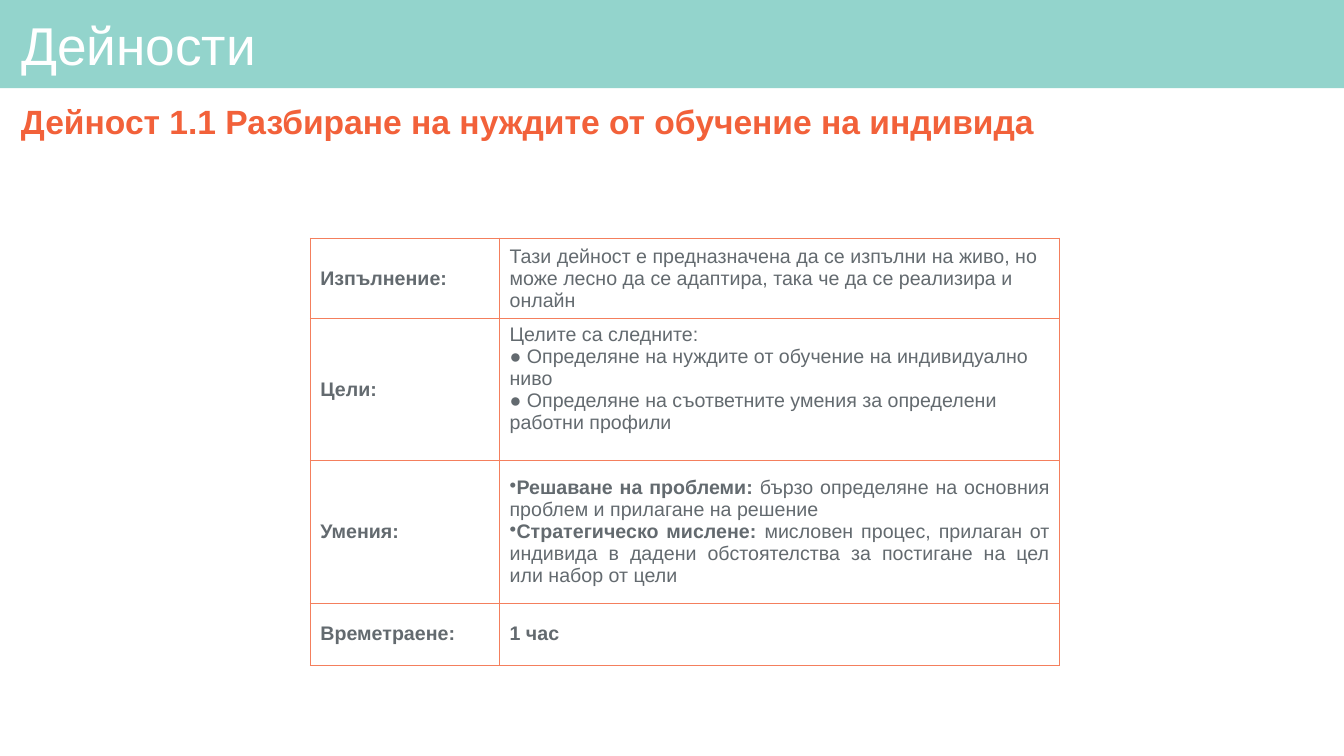
from lxml import etree
from pptx import Presentation
from pptx.dml.color import RGBColor
from pptx.enum.shapes import MSO_SHAPE
from pptx.enum.text import MSO_ANCHOR, MSO_AUTO_SIZE, PP_ALIGN
from pptx.oxml.ns import qn
from pptx.util import Cm, Pt

TEAL = RGBColor(0x93, 0xD4, 0xCC)
WHITE = RGBColor(0xFF, 0xFF, 0xFF)
ORANGE = RGBColor(0xF2, 0x61, 0x3A)
BORDER = RGBColor(0xF4, 0x7F, 0x5D)
GREY = RGBColor(0x63, 0x6A, 0x6F)
RECTANGLE = MSO_SHAPE.RECTANGLE
TOP, MIDDLE = MSO_ANCHOR.TOP, MSO_ANCHOR.MIDDLE
LEFT, JUSTIFY = PP_ALIGN.LEFT, PP_ALIGN.JUSTIFY
NO_AUTOFIT = MSO_AUTO_SIZE.NONE


def style(paragraph, size, color, bold=False):
    font = paragraph.font
    font.name, font.size, font.bold = "Arial", Pt(size), bold
    font.color.rgb = color


def add_border(cell):
    properties = cell._tc.get_or_add_tcPr()
    for side in ("a:lnL", "a:lnR", "a:lnT", "a:lnB"):
        line = etree.SubElement(properties, qn(side), w=str(Pt(0.75)))
        fill = etree.SubElement(line, qn("a:solidFill"))
        etree.SubElement(fill, qn("a:srgbClr"), val=str(BORDER))


prs = Presentation()
prs.slide_width, prs.slide_height = Cm(33.87), Cm(19.05)
slide = prs.slides.add_slide(prs.slide_layouts[5])

# Header band, behind the title
band = slide.shapes.add_shape(RECTANGLE, 0, 0, prs.slide_width, Cm(2.22))
band.shadow.inherit = False
band.fill.solid()
band.fill.fore_color.rgb = TEAL
band.line.fill.background()
slide.shapes._spTree.insert(2, band._element)

# Title
title = slide.shapes.title
title.left, title.top, title.width, title.height = Cm(0.28), Cm(0.23), Cm(33.17), Cm(1.98)
title.text = "Дейности"
title_frame = title.text_frame
title_frame.auto_size = NO_AUTOFIT
title_frame.vertical_anchor = MIDDLE
title_frame.margin_left = Cm(0.25)
title_frame.margin_right = title_frame.margin_top = title_frame.margin_bottom = Cm(0.15)
heading = title_frame.paragraphs[0]
heading.alignment, heading.line_spacing = LEFT, 0.9
style(heading, 38, WHITE)

# Activity name
activity = slide.shapes.add_textbox(Cm(0.28), Cm(2.36), Cm(33.17), Cm(1.52)).text_frame
activity.word_wrap = True
activity.vertical_anchor = MIDDLE
activity.text = "Дейност 1.1 Разбиране на нуждите от обучение на индивида"
activity_name = activity.paragraphs[0]
activity_name.alignment, activity_name.line_spacing = JUSTIFY, 0.9
style(activity_name, 24, ORANGE, bold=True)

# Each row: label, height in cm, paragraphs as (bold part, plain part)
details = [
    ("Изпълнение:", 1.93, [
        ("", "Тази дейност е предназначена да се изпълни на живо, но може лесно "
             "да се адаптира, така че да се реализира и онлайн")]),
    ("Цели:", 3.58, [
        ("", "Целите са следните:"),
        ("", "● Определяне на нуждите от обучение на индивидуално ниво"),
        ("", "● Определяне на съответните умения за определени работни профили")]),
    ("Умения:", 3.58, [
        ("Решаване на проблеми:",
         " бързо определяне на основния проблем и прилагане на решение"),
        ("Стратегическо мислене:",
         " мисловен процес, прилаган от индивида в дадени обстоятелства "
         "за постигане на цел или набор от цели")]),
    ("Времетраене:", 1.57, [("1 час", "")]),
]

# Activity table
table = slide.shapes.add_table(len(details), 2, Cm(7.82), Cm(6), Cm(18.89), Cm(10.66)).table
table.first_row = table.horz_banding = False
table.columns[0].width, table.columns[1].width = Cm(4.77), Cm(14.12)

for row, (label, height, lines) in enumerate(details):
    table.rows[row].height = Cm(height)
    label_cell, content_cell = table.cell(row, 0), table.cell(row, 1)
    for cell in (label_cell, content_cell):
        add_border(cell)
        cell.fill.background()
        cell.vertical_anchor = MIDDLE
    label_cell.text = label
    style(label_cell.text_frame.paragraphs[0], 14, GREY, bold=True)

    content = content_cell.text_frame
    for number, (strong, plain) in enumerate(lines):
        paragraph = content.add_paragraph() if number else content.paragraphs[0]
        style(paragraph, 14, GREY, bold=not plain)
        for text, bold in ((strong, True), (plain, False)):
            if text:
                run = paragraph.add_run()
                run.text, run.font.bold = text, bold
        # Skills are bulleted and justified
        if strong and plain:
            paragraph.alignment = JUSTIFY
            bullet_properties = paragraph._p.get_or_add_pPr()
            bullet_properties.set("marL", "0")
            bullet_properties.set("indent", "0")
            bullet = etree.Element(qn("a:buChar"), char="•")
            bullet_properties.find(qn("a:defRPr")).addprevious(bullet)

# The goals start at the top of their cell
table.cell(1, 1).vertical_anchor = TOP

prs.save("out.pptx")
